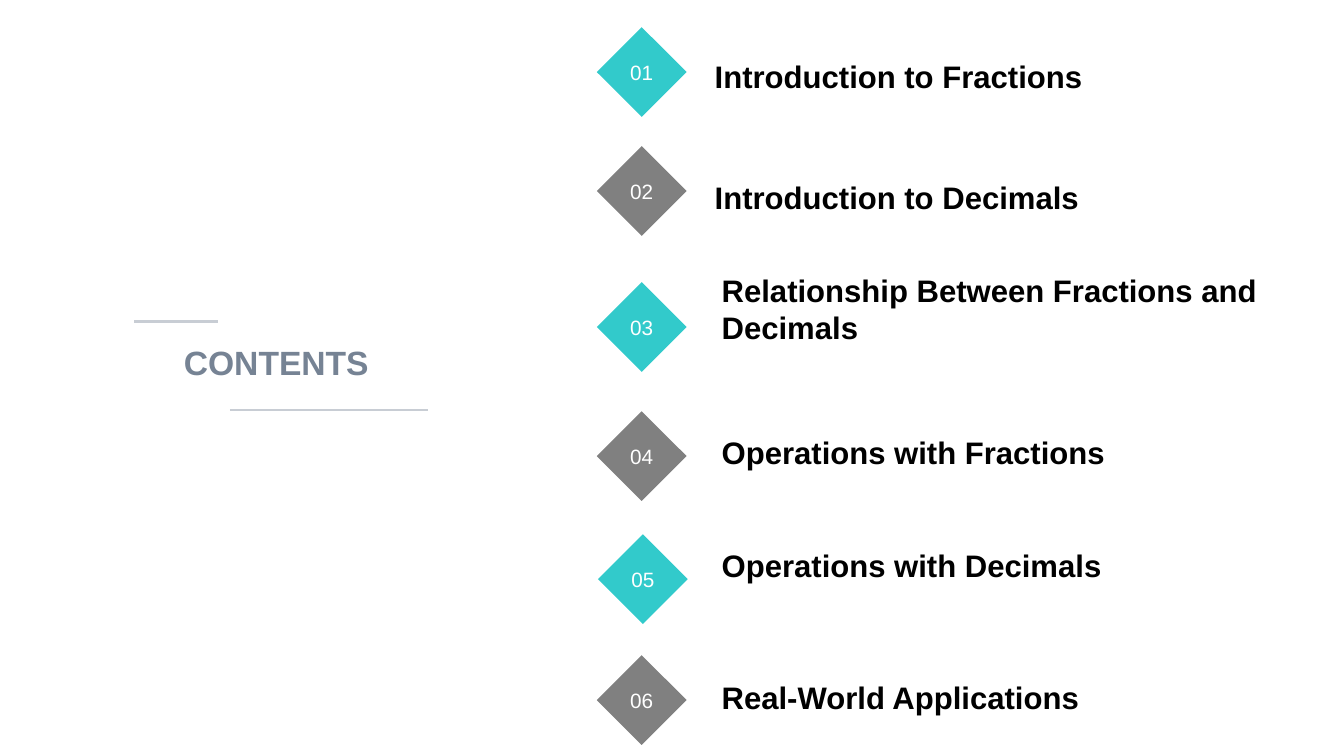
"""Build a contents slide with six numbered topics."""
from dataclasses import dataclass

from lxml import etree
from pptx import Presentation
from pptx.dml.color import RGBColor
from pptx.enum.shapes import MSO_CONNECTOR, MSO_SHAPE
from pptx.enum.text import MSO_ANCHOR, PP_ALIGN
from pptx.oxml.ns import qn
from pptx.slide import Slide
from pptx.text.text import TextFrame
from pptx.util import Emu, Inches, Pt

DIAMOND = MSO_SHAPE.DIAMOND
STRAIGHT = MSO_CONNECTOR.STRAIGHT
TOP, MIDDLE, BOTTOM = MSO_ANCHOR.TOP, MSO_ANCHOR.MIDDLE, MSO_ANCHOR.BOTTOM
LEFT, CENTER = PP_ALIGN.LEFT, PP_ALIGN.CENTER

WIDTH, HEIGHT = Inches(13.33), Inches(7.5)
FONT = "Arial"
TEAL, GRAY, WHITE, BLACK = "32CACB", "808080", "FFFFFF", "000000"
SLATE, RULE_COLOR = "768394", "C8CDD4"


@dataclass(frozen=True)
class Box:
    """A rectangle in percent of the slide's width and height."""
    x: float
    y: float
    w: float
    h: float

    def emu(self) -> tuple[Emu, Emu, Emu, Emu]:
        """Return left, top, width and height as lengths."""
        return across(self.x), down(self.y), across(self.w), down(self.h)


@dataclass(frozen=True)
class Topic:
    """A contents entry with the places of its diamond and title."""
    title: str
    diamond_y: float
    title_y: float
    diamond_x: float = 44.41
    title_x: float = 52.96


@dataclass(frozen=True)
class Rule:
    """A horizontal line from one x to another."""
    start: float
    end: float
    y: float


TOPICS = [
    Topic("Introduction to Fractions", 3.6, 7.87, title_x=52.44),
    Topic("Introduction to Decimals", 19.33, 23.87, title_x=52.44),
    Topic("Relationship Between Fractions and Decimals", 37.33, 41.07),
    Topic("Operations with Fractions", 54.4, 57.6),
    Topic("Operations with Decimals", 70.67, 72.53, diamond_x=44.49),
    Topic("Real-World Applications", 86.67, 90),
]
RULES = [Rule(16.2, 9.98, 42.53), Rule(17.1, 31.88, 54.27)]


def across(share: float) -> Emu:
    """Convert a percentage of the slide's width."""
    return Emu(round(WIDTH * share / 100))


def down(share: float) -> Emu:
    """Convert a percentage of the slide's height."""
    return Emu(round(HEIGHT * share / 100))


def rgb(color: str) -> RGBColor:
    """Convert a hex string to a colour."""
    return RGBColor.from_string(color)


def write(tf: TextFrame, text: str, size: float, color: str, bold: bool,
          align: PP_ALIGN, anchor: MSO_ANCHOR) -> None:
    """Put one styled paragraph in a text frame."""
    tf.vertical_anchor = anchor
    p = tf.paragraphs[0]
    p.text = text
    p.alignment = align
    p.font.name = FONT
    p.font.size = Pt(size)
    p.font.bold = bold
    p.font.color.rgb = rgb(color)


def add_text(s: Slide, box: Box, text: str, size: float, color: str,
             align: PP_ALIGN, anchor: MSO_ANCHOR) -> None:
    """Add a wrapping bold text box."""
    tf = s.shapes.add_textbox(*box.emu()).text_frame
    tf.word_wrap = True
    write(tf, text, size, color, True, align, anchor)


def add_diamond(s: Slide, box: Box, label: str, fill: str) -> None:
    """Add a numbered diamond."""
    sp = s.shapes.add_shape(DIAMOND, *box.emu())
    sp.shadow.inherit = False
    sp.fill.solid()
    sp.fill.fore_color.rgb = rgb(fill)
    sp.line.fill.background()
    tf = sp.text_frame
    tf.margin_left = tf.margin_right = 0
    tf.word_wrap = False
    write(tf, label, 14.8, WHITE, False, CENTER, MIDDLE)


def add_topic(s: Slide, number: int, topic: Topic) -> None:
    """Add a topic's diamond and title."""
    diamond = Box(topic.diamond_x, topic.diamond_y, 6.68, 11.87)
    add_diamond(s, diamond, f"{number:02}", TEAL if number % 2 else GRAY)
    title = Box(topic.title_x, topic.title_y, 42.09, 5.33)
    add_text(s, title, topic.title, 22.2, BLACK, LEFT, BOTTOM)


def add_rule(s: Slide, rule: Rule) -> None:
    """Add a thin horizontal line."""
    y = down(rule.y)
    line = s.shapes.add_connector(STRAIGHT, across(rule.start), y,
                                  across(rule.end), y)
    line.line.color.rgb = rgb(RULE_COLOR)
    line.line.width = Pt(1.75)
    etree.SubElement(line._element.spPr, qn("a:effectLst"))


def main() -> None:
    """Build and save the slide."""
    prs = Presentation()
    prs.slide_width, prs.slide_height = WIDTH, HEIGHT
    s = prs.slides.add_slide(prs.slide_layouts[6])
    for number, topic in enumerate(TOPICS, 1):
        add_topic(s, number, topic)
    add_text(s, Box(12.38, 44.53, 16.35, 7.73), "CONTENTS", 24, SLATE,
             CENTER, TOP)
    for rule in RULES:
        add_rule(s, rule)
    prs.save("out.pptx")


if __name__ == "__main__":
    main()
